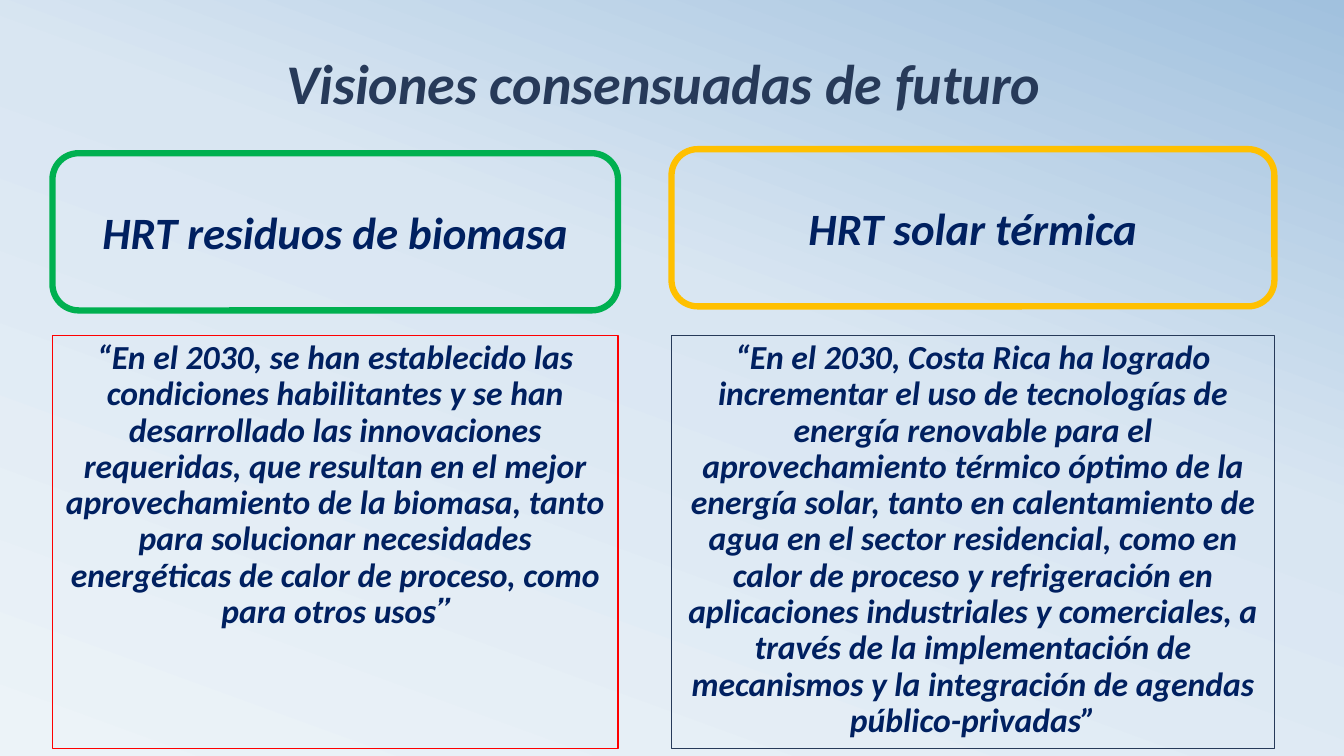
from copy import deepcopy
from pptx import Presentation
from pptx.dml.color import RGBColor
from pptx.enum.shapes import MSO_SHAPE as SHAPE
from pptx.enum.text import MSO_ANCHOR as ANCHOR, PP_ALIGN as ALIGN
from pptx.oxml.ns import qn
from pptx.util import Inches, Pt

TITLE = "Visiones consensuadas de futuro"
STOPS = [(0, "ECF3F8"), (0.58, "D9E6F2"), (1, "A1C1DE")]
NAVY, SLATE = "002060", "273A59"

# Each column: left, width, header, vision; runs are (text, font)
COLUMNS = [
    dict(left=0.52, width=5.61, top=1.52, head="HRT residuos de biomasa",
         edge="00B050", frame="FF0000",
         vision=[("“En el 2030, se han establecido las condiciones habilitantes "
                  "y se han desarrollado las innovaciones requeridas, que resultan "
                  "en el mejor aprovechamiento de la biomasa, tanto para solucionar "
                  "necesidades energéticas de calor de proceso, como para otros uso",
                  "Calibri"), ("s”", "Cabin")]),
    dict(left=6.66, width=5.98, top=1.48, head="HRT solar térmica",
         edge="FFC000", frame=SLATE,
         vision=[("“En el 2030, Costa Rica ha logrado incrementar el uso de "
                  "tecnologías de energía renovable para el aprovechamiento térmico "
                  "óptimo de la energía solar, tanto en calentamiento de agua en el "
                  "sector residencial, como en calor de proceso y refrigeración en "
                  "aplicaciones industriales y comerciales, a través de la "
                  "implementación de mecanismos y la integración de agendas "
                  "público-privadas”", "Calibri")]),
]
HEAD_H, BODY_TOP, BODY_H = 1.56, 3.33, 4.1


def color(code):
    return RGBColor.from_string(code)


def write(shape, runs, size, ink, anchor, spacing):
    frame = shape.text_frame
    frame.word_wrap = True
    frame.vertical_anchor = anchor
    para = frame.paragraphs[0]
    para.alignment = ALIGN.CENTER
    para.line_spacing = spacing
    for text, face in runs:
        run = para.add_run()
        run.text = text
        style = dict(name=face, size=Pt(size), bold=True, italic=True)
        for key, value in style.items():
            setattr(run.font, key, value)
        run.font.color.rgb = color(ink)


def add_box(kind, box, edge, weight):
    shape = slide.shapes.add_shape(kind, *map(Inches, box))
    shape.shadow.inherit = False
    shape.fill.background()
    shape.line.color.rgb = color(edge)
    shape.line.width = Pt(weight)
    return shape


deck = Presentation()
deck.slide_width, deck.slide_height = Inches(13.33), Inches(7.5)
slide = deck.slides.add_slide(deck.slide_layouts[5])

# Background gradient, light at bottom left
fill = slide.background.fill
fill.gradient()
fill.gradient_angle = 70
stops = slide.element.find(".//" + qn("a:gsLst"))
stops.append(deepcopy(stops[-1]))
for stop, (place, code) in zip(fill.gradient_stops, STOPS):
    stop.position = place
    stop.color.rgb = color(code)

# Title
title = slide.shapes.title
title.left, title.top, title.width, title.height = map(
    Inches, (0.51, 0.33, 12.14, 1.09))
write(title, [(TITLE, "Calibri")], 40, SLATE, ANCHOR.MIDDLE, 0.8)

# Header and vision of each column
for col in COLUMNS:
    left, width = col["left"], col["width"]
    body = add_box(SHAPE.RECTANGLE, (left, BODY_TOP, width, BODY_H),
                   col["frame"], 0.75)
    write(body, col["vision"], 24, NAVY, ANCHOR.TOP, 0.9)
    head = add_box(SHAPE.ROUNDED_RECTANGLE, (left, col["top"], width, HEAD_H),
                   col["edge"], 4.5)
    write(head, [(col["head"], "Calibri")], 32, NAVY, ANCHOR.MIDDLE, 1.0)

deck.save("out.pptx")
